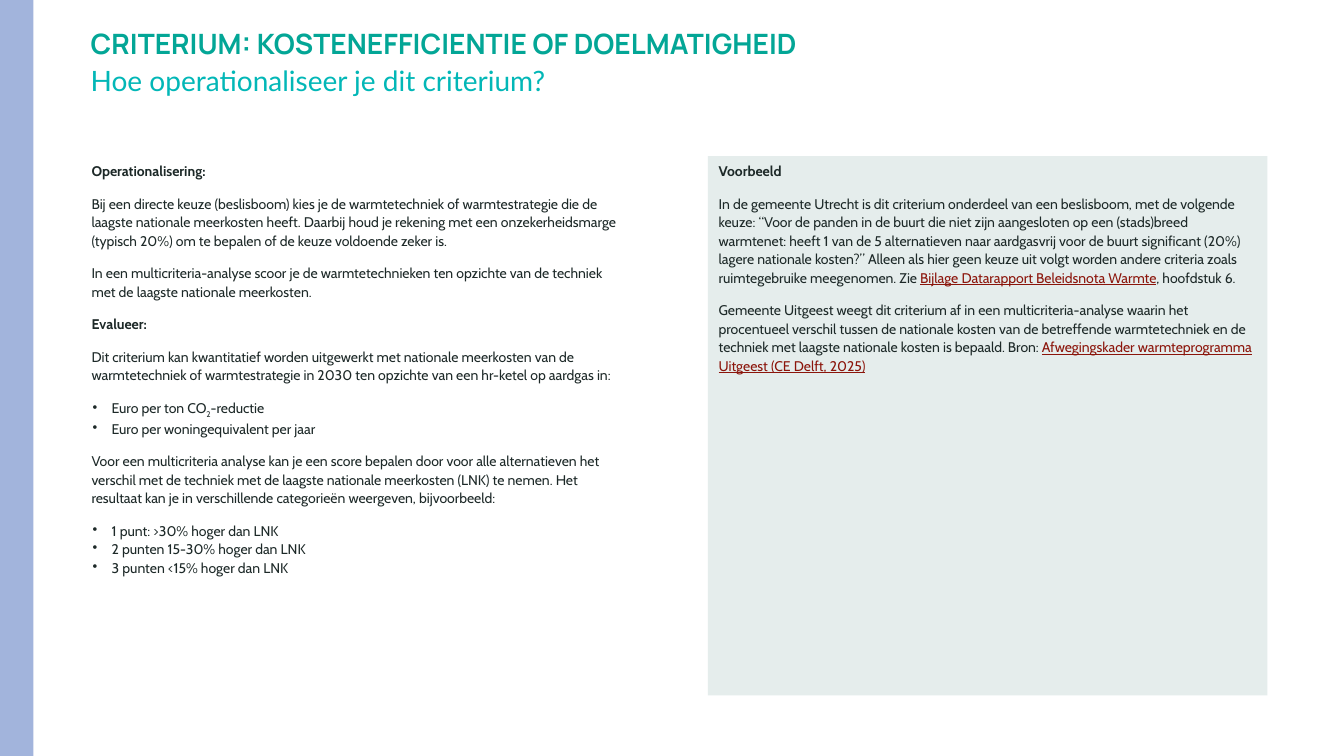
import pptx
import pptx.dml.color
import pptx.enum.shapes
import pptx.enum.text
import pptx.oxml.ns
import pptx.util
from lxml import etree

COLOURS = {
    "title": "03A696",
    "subtitle": "02B7B7",
    "text": "1D2928",
    "link": "8B150B",
    "panel": "E5EDEC",
    "band": "A2B4DC",
}
SLIDE_WIDTH = pptx.util.Inches(13.33)
SLIDE_HEIGHT = pptx.util.Inches(7.5)

BODY = {"name": "Cabin", "size": pptx.util.Pt(10), "bold": False}
TITLE = {"name": "Manrope", "size": pptx.util.Pt(20), "bold": True}
SUBTITLE = {"name": "Lato", "size": pptx.util.Pt(20), "bold": False}
FLAT_MARGINS = {"margin_top": 0, "margin_bottom": 0}

EXPLANATION = [
    ("heading", ["Operationalisering:"]),
    ("plain", ["Bij een directe keuze (beslisboom) kies je de warmtetechniek of warmtestrategie die de laagste nationale meerkosten heeft. Daarbij houd je rekening met een onzekerheidsmarge (typisch 20%) om te bepalen of de keuze voldoende zeker is."]),
    ("plain", ["In een multicriteria-analyse scoor je de warmtetechnieken ten opzichte van de techniek met de laagste nationale meerkosten."]),
    ("heading", ["Evalueer:"]),
    ("plain", ["Dit criterium kan kwantitatief worden uitgewerkt met nationale meerkosten van de warmtetechniek of warmtestrategie in 2030 ten opzichte van een hr-ketel op aardgas in:"]),
    ("bullet", ["Euro per ton CO", ("2", "subscript"), "-reductie"]),
    ("bullet", ["Euro per woningequivalent per jaar"]),
    ("plain", ["Voor een multicriteria analyse kan je een score bepalen door voor alle alternatieven het verschil met de techniek met de laagste nationale meerkosten (LNK) te nemen. Het resultaat kan je in verschillende categorieën weergeven, bijvoorbeeld:"]),
    ("bullet", ["1 punt: >30% hoger dan LNK"]),
    ("bullet", ["2 punten 15-30% hoger dan LNK"]),
    ("bullet", ["3 punten <15% hoger dan LNK"]),
]
EXAMPLE = [
    ("heading", ["Voorbeeld"]),
    ("plain", [
        "In de gemeente Utrecht is dit criterium onderdeel van een beslisboom, met de volgende keuze: “Voor de panden in de buurt die niet zijn aangesloten op een (stads)breed warmtenet: heeft 1 van de 5 alternatieven naar aardgasvrij voor de buurt significant (20%) lagere nationale kosten?” Alleen als hier geen keuze uit volgt worden andere criteria zoals ruimtegebruike meegenomen. Zie ",
        ("Bijlage Datarapport Beleidsnota Warmte", "link"),
        ", hoofdstuk 6.",
    ]),
    ("plain", [
        "Gemeente Uitgeest weegt dit criterium af in een multicriteria-analyse waarin het procentueel verschil tussen de nationale kosten van de betreffende warmtetechniek en de techniek met laagste nationale kosten is bepaald. Bron: ",
        ("Afwegingskader warmteprogramma Uitgeest (CE Delft, 2025)", "link"),
    ]),
]


def apply(target, values):
    for name, value in values.items():
        setattr(target, name, value)


def colour(name):
    return pptx.dml.color.RGBColor.from_string(COLOURS[name])


def area(left, top, width, height):
    return {
        "left": round(SLIDE_WIDTH * left / 100),
        "top": round(SLIDE_HEIGHT * top / 100),
        "width": round(SLIDE_WIDTH * width / 100),
        "height": round(SLIDE_HEIGHT * height / 100),
    }


def add_run(paragraph, text, font, colour_name):
    run = paragraph.add_run()
    run.text = text
    apply(run.font, font)
    run.font.color.rgb = colour(colour_name)
    return run


def add_rectangle(slide, place, fill):
    shape = slide.shapes.add_shape(
        pptx.enum.shapes.MSO_SHAPE.RECTANGLE, *place.values())
    shape.shadow.inherit = False
    shape.fill.solid()
    shape.fill.fore_color.rgb = colour(fill)
    shape.line.fill.background()
    return shape


def format_frame(frame, values):
    apply(frame, {
        "word_wrap": True,
        "auto_size": pptx.enum.text.MSO_AUTO_SIZE.NONE,
        "vertical_anchor": pptx.enum.text.MSO_ANCHOR.TOP,
        **values,
    })


def write_line(shape, text, font, colour_name, spacing, frame_values):
    format_frame(shape.text_frame, frame_values)
    paragraph = shape.text_frame.paragraphs[0]
    apply(paragraph, {
        "alignment": pptx.enum.text.PP_ALIGN.LEFT,
        "line_spacing": spacing,
        "space_before": pptx.util.Pt(0),
    })
    add_run(paragraph, text, font, colour_name)


def indent(paragraph, kind):
    left, first = (0.21, -0.19) if kind == "bullet" else (0.01, 0)
    properties = paragraph._p.get_or_add_pPr()
    properties.set("marL", str(pptx.util.Inches(left)))
    properties.set("indent", str(pptx.util.Inches(first)))
    if kind == "bullet":
        mark = etree.SubElement(properties, pptx.oxml.ns.qn("a:buChar"))
        mark.set("char", "•")


def write_body(shape, content):
    frame = shape.text_frame
    format_frame(frame, {})
    previous = None
    for kind, parts in content:
        paragraph = frame.add_paragraph() if previous else frame.paragraphs[0]
        indent(paragraph, kind)
        tight = previous is None or previous == kind == "bullet"
        apply(paragraph, {
            "alignment": pptx.enum.text.PP_ALIGN.LEFT,
            "line_spacing": 1.1,
            "space_before": pptx.util.Pt(0 if tight else 10),
        })
        for part in parts:
            text, style = (part, kind) if isinstance(part, str) else part
            font = {**BODY, "bold": style == "heading", "underline": style == "link"}
            run = add_run(paragraph, text, font, "link" if style == "link" else "text")
            if style == "subscript":
                run._r.get_or_add_rPr().set("baseline", "-25000")
        previous = kind


def main():
    presentation = pptx.Presentation()
    apply(presentation, {"slide_width": SLIDE_WIDTH, "slide_height": SLIDE_HEIGHT})
    slide = presentation.slides.add_slide(presentation.slide_layouts[5])

    add_rectangle(slide, area(0, 0, 2.48, 100), "band")

    title = slide.shapes.title
    apply(title, area(6, 2.8, 88, 5.2))
    write_line(title, "CRITERIUM: KOSTENEFFICIENTIE OF DOELMATIGHEID", TITLE, "title", 0.9,
               {**FLAT_MARGINS, "vertical_anchor": pptx.enum.text.MSO_ANCHOR.BOTTOM})

    subtitle = slide.shapes.add_textbox(*area(6, 8, 88, 10.53).values())
    write_line(subtitle, "Hoe operationaliseer je dit criterium?", SUBTITLE, "subtitle", 1.1,
               FLAT_MARGINS)

    explanation = slide.shapes.add_textbox(*area(6, 20.67, 41.04, 71.33).values())
    write_body(explanation, EXPLANATION)

    example = add_rectangle(slide, area(52.66, 20.67, 41.64, 71.33), "panel")
    write_body(example, EXAMPLE)

    presentation.save("out.pptx")


if __name__ == "__main__":
    main()
